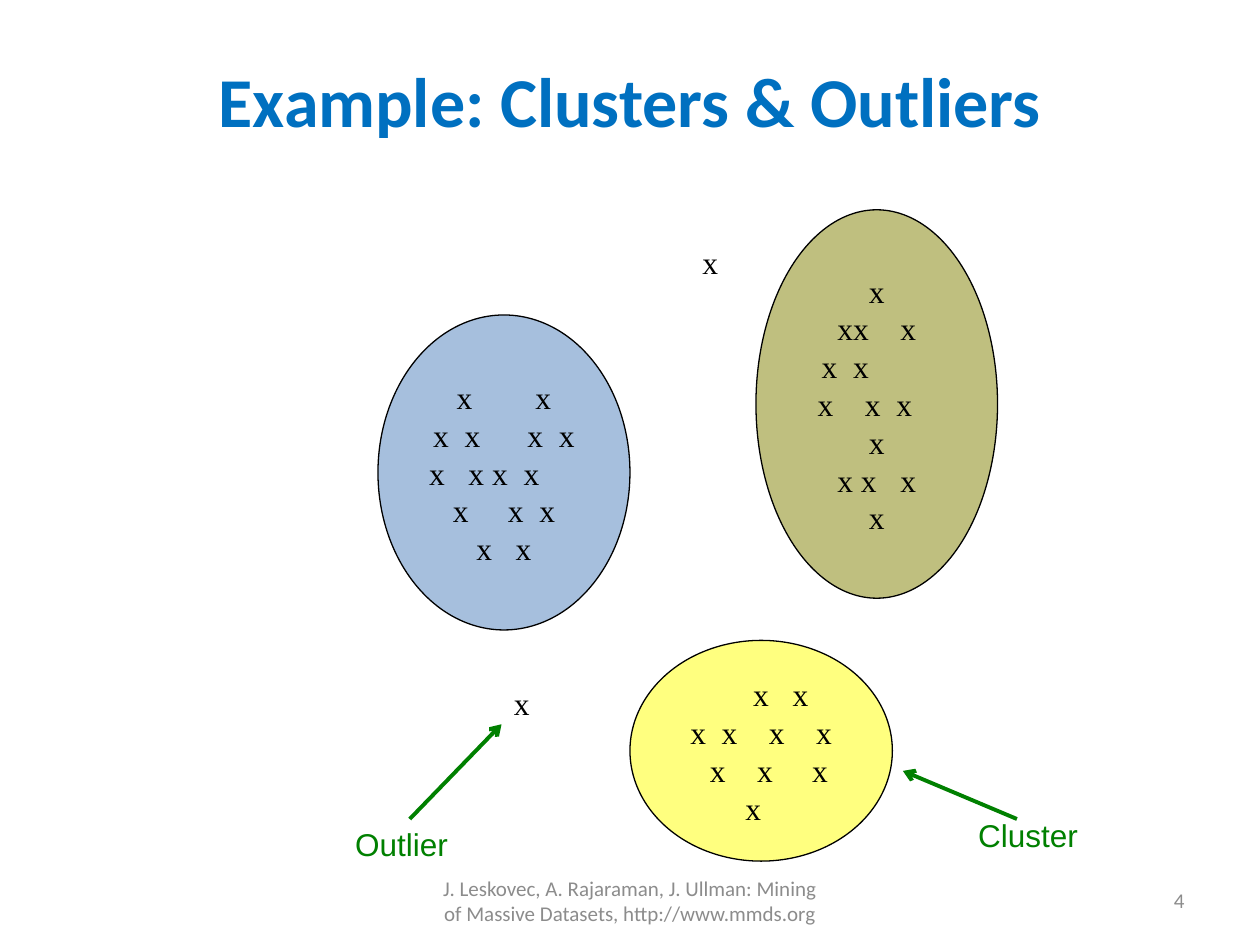
from pptx import Presentation
from pptx.dml.color import RGBColor
from pptx.enum.shapes import MSO_CONNECTOR, MSO_SHAPE
from pptx.enum.text import MSO_ANCHOR as ANCHOR, PP_ALIGN as ALIGN
from pptx.oxml.ns import qn
from pptx.util import Cm, Pt
from lxml.etree import SubElement

COLORS = {
    "title": "0070C0", "ink": "000000", "label": "008000", "footer": "8C8C8C",
    "blue": "4F81BD", "olive": "808000", "yellow": "FFFF00",
}
TITLE = ("Example: Clusters & Outliers", (1.27, 0.76, 22.86, 2.51))
CLUSTERS = [
    ("blue", (7.62, 6.35, 5.08, 6.35),
     ["x        x", "x  x      x  x", "x   x x  x     ", "x     x  x", "x   x"]),
    ("olive", (15.24, 4.23, 4.87, 7.83),
     ["x", "xx    x", "x  x        ", "x    x  x   ", "x", "x x   x", "x"]),
    ("yellow", (12.7, 12.91, 5.29, 4.45),
     ["     x   x", "x  x    x    x", "  x    x     x", "x  "]),
]
OUTLIERS = [(13.91, 4.78, 0.95, 1.27), (10.11, 13.67, 0.95, 1.27)]
LABELS = [
    ("Outlier", (6.91, 16.51, 2.42, 1.02), (8.26, 16.51, 10.11, 14.6)),
    ("Cluster", (19.47, 16.33, 2.54, 1.02), (20.5, 16.51, 18.2, 15.54)),
]
FOOTERS = [
    ("J. Leskovec, A. Rajaraman, J. Ullman: Mining of Massive Datasets, http://www.mmds.org",
     (8.68, 17.65, 8.04, 1.01), ALIGN.CENTER),
    ("4", (18.2, 17.65, 5.93, 1.01), ALIGN.RIGHT),
]


def rgb(name):
    return RGBColor.from_string(COLORS[name])


def lengths(box):
    return [Cm(v) for v in box]


def write(s, lines, font, size, color, align=ALIGN.LEFT, anchor=ANCHOR.TOP, wrap=False, bold=False):
    tf = s.text_frame
    tf.text = "\n".join(lines)
    tf.word_wrap = wrap
    tf.vertical_anchor = anchor
    for p in tf.paragraphs:
        p.alignment = align
        p.font.name, p.font.size, p.font.bold = font, Pt(size), bold
        p.font.color.rgb = rgb(color)


def add_text(slide, text, box, *args, **kwargs):
    write(slide.shapes.add_textbox(*lengths(box)), [text], *args, **kwargs)


def add_cluster(slide, color, box, rows):
    s = slide.shapes.add_shape(MSO_SHAPE.OVAL, *lengths(box))
    s.shadow.inherit = False
    s.fill.solid()
    s.fill.fore_color.rgb = rgb(color)
    fill = s.fill._xPr.find(qn("a:solidFill"))
    SubElement(fill[0], qn("a:alpha"), val="50000")
    s.line.color.rgb = rgb("ink")
    s.line.width = Pt(0.75)
    write(s, rows, "Times New Roman", 18, "ink", ALIGN.CENTER, ANCHOR.MIDDLE)


def add_arrow(slide, ends):
    s = slide.shapes.add_connector(MSO_CONNECTOR.STRAIGHT, *lengths(ends))
    s.line.color.rgb = rgb("label")
    s.line.width = Pt(2.25)
    SubElement(s.line._get_or_add_ln(), qn("a:tailEnd"), type="arrow")
    SubElement(s._element.spPr, qn("a:effectLst"))


def main():
    """Build the slide of clusters and outliers."""
    prs = Presentation()
    prs.slide_width, prs.slide_height = Cm(25.4), Cm(19.05)
    slide = prs.slides.add_slide(prs.slide_layouts[5])

    text, box = TITLE
    title = slide.shapes.title
    title.left, title.top, title.width, title.height = lengths(box)
    write(title, [text], "Calibri", 40, "title", ALIGN.CENTER, ANCHOR.MIDDLE, True, True)

    for color, box, rows in CLUSTERS:
        add_cluster(slide, color, box, rows)
    for box in OUTLIERS:
        add_text(slide, "x", box, "Times New Roman", 18, "ink")
    for text, box, ends in LABELS:
        add_arrow(slide, ends)
        add_text(slide, text, box, "Arial", 18, "label")
    for text, box, align in FOOTERS:
        add_text(slide, text, box, "Calibri", 12, "footer", align, ANCHOR.MIDDLE, True)

    prs.save("out.pptx")


if __name__ == "__main__":
    main()
